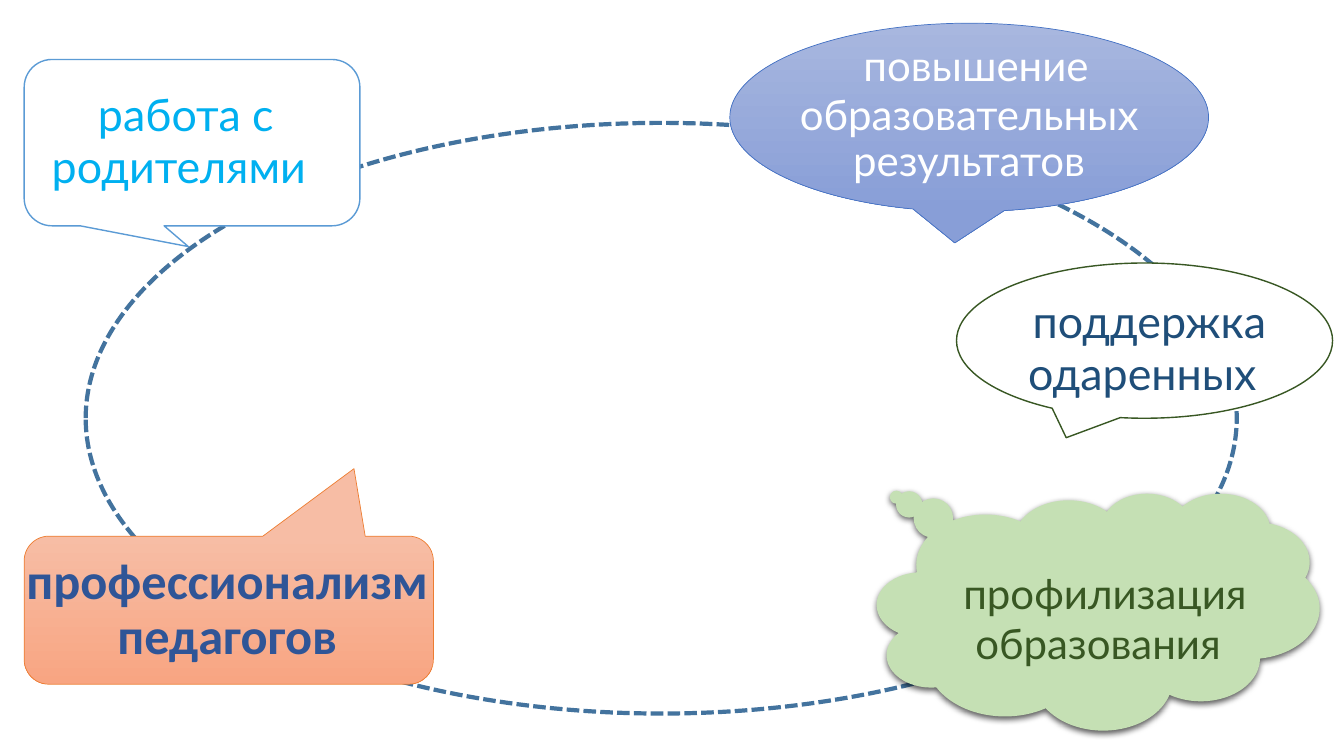
import pptx
import pptx.dml.color
import pptx.enum.dml
import pptx.enum.shapes
import pptx.enum.text
import pptx.oxml
import pptx.oxml.ns
import pptx.util

Pt = pptx.util.Pt
RGB = pptx.dml.color.RGBColor
SHAPE = pptx.enum.shapes.MSO_SHAPE

WHITE = RGB(0xFF, 0xFF, 0xFF)
BLACK = RGB(0x00, 0x00, 0x00)
RING_BLUE = RGB(0x43, 0x73, 0x9E)
BLUE = RGB(0x44, 0x72, 0xC4)
BLUE_TOP = RGB(0xA8, 0xB7, 0xDF)
BLUE_BOTTOM = RGB(0x88, 0x9E, 0xD7)
LIGHT_BLUE = RGB(0x5B, 0x9B, 0xD5)
SKY = RGB(0x00, 0xB0, 0xF0)
NAVY = RGB(0x1F, 0x4E, 0x79)
ROYAL = RGB(0x2F, 0x55, 0x97)
GREEN = RGB(0xC5, 0xE0, 0xB4)
DARK_GREEN = RGB(0x38, 0x57, 0x23)
ORANGE = RGB(0xED, 0x7D, 0x31)
ORANGE_TOP = RGB(0xF7, 0xBD, 0xA5)
ORANGE_BOTTOM = RGB(0xF8, 0xA5, 0x82)


class Board:
    """Holds the current slide and the text style."""

    line_spacing = 0.9
    lead_size = 44

    def __init__(self, slide):
        self.shapes = slide.shapes

    def shape(self, kind, box, fill=None, line=None, width=1, adj=()):
        """Add a preset shape; fill is None, a colour or a (top, bottom) pair."""
        sp = self.shapes.add_shape(kind, *map(Pt, box))
        sp.shadow.inherit = False
        for i, value in enumerate(adj):
            sp.adjustments[i] = value
        if fill is None:
            sp.fill.background()
        elif isinstance(fill, RGB):
            sp.fill.solid()
            sp.fill.fore_color.rgb = fill
        else:
            sp.fill.gradient()
            sp.fill.gradient_angle = 270
            for stop, color in zip(sp.fill.gradient_stops, fill):
                stop.color.rgb = color
        if line is None:
            sp.line.fill.background()
        else:
            sp.line.color.rgb = line
            sp.line.width = Pt(width)
        return sp

    def drop_shadow(self, sp):
        effects = sp._element.spPr.find(pptx.oxml.ns.qn("a:effectLst"))
        effects.append(pptx.oxml.parse_xml(
            f'<a:outerShdw {pptx.oxml.ns.nsdecls("a")} blurRad="{Pt(4.5)}" '
            f'dist="{Pt(1.5)}" dir="5400000" algn="ctr" rotWithShape="0">'
            '<a:srgbClr val="000000"><a:alpha val="63000"/></a:srgbClr>'
            '</a:outerShdw>'))

    def run(self, p, text, size, color, font, bold=False):
        r = p.add_run()
        r.text = text
        r.font.size = Pt(size)
        r.font.name = font
        r.font.color.rgb = color
        r.font.bold = bold

    def label(self, box, lines, size, color, font="Lato", bold=False, lead=True):
        """Add centred text; lead starts it with one tall space."""
        tf = self.shapes.add_textbox(*map(Pt, box)).text_frame
        tf.word_wrap = True
        for i, text in enumerate(lines):
            p = tf.add_paragraph() if i else tf.paragraphs[0]
            p.alignment = pptx.enum.text.PP_ALIGN.CENTER
            p.line_spacing = self.line_spacing
            if lead and i == 0:
                self.run(p, " ", self.lead_size, BLACK, "Calibri")
            self.run(p, text, size, color, font, bold)


def main():
    prs = pptx.Presentation()
    prs.slide_width, prs.slide_height = Pt(960), Pt(540)
    s = prs.slides.add_slide(prs.slide_layouts[6])
    board = Board(s)

    ring = board.shape(SHAPE.OVAL, (61.2, 87.8, 822.2, 421.9),
                       line=RING_BLUE, width=3)
    ring.line.dash_style = pptx.enum.dml.MSO_LINE.SQUARE_DOT

    board.shape(SHAPE.OVAL_CALLOUT, (521.3, 16.6, 342, 134.6),
                (BLUE_TOP, BLUE_BOTTOM), BLUE, 0.5, (-0.03, 0.666))
    board.shape(SHAPE.ROUNDED_RECTANGULAR_CALLOUT, (17.3, 42.5, 239.8, 118.8),
                WHITE, LIGHT_BLUE, adj=(-0.011, 0.625, 0.167))
    cloud = board.shape(SHAPE.CLOUD_CALLOUT, (626.4, 352.1, 316.1, 169.2),
                        GREEN, adj=(-0.456, -0.482))
    board.drop_shadow(cloud)
    board.shape(SHAPE.OVAL_CALLOUT, (683.3, 187.9, 268.6, 110.9),
                WHITE, DARK_GREEN)

    board.label((663.8, 200.2, 304.6, 83.5), ["поддержка одаренных"], 32, NAVY)
    board.label((642.2, 393.8, 284.4, 59.8), ["профилизация", "образования"],
                30, DARK_GREEN)
    board.label((-24.5, 52.6, 304.6, 97.9), ["работа с родителями"], 32, SKY)
    board.label((540, 16.6, 304.6, 120.2),
                ["повышение образовательных результатов"], 30, WHITE)

    board.shape(SHAPE.ROUNDED_RECTANGULAR_CALLOUT, (17.3, 383, 292.3, 105.8),
                (ORANGE_TOP, ORANGE_BOTTOM), ORANGE, 0.5,
                (0.306, -0.956, 0.167))
    board.label((10.1, 393.8, 304.6, 97.9), ["профессионализм педагогов"],
                36, ROYAL, "Calibri", bold=True, lead=False)

    prs.save("out.pptx")


if __name__ == "__main__":
    main()
